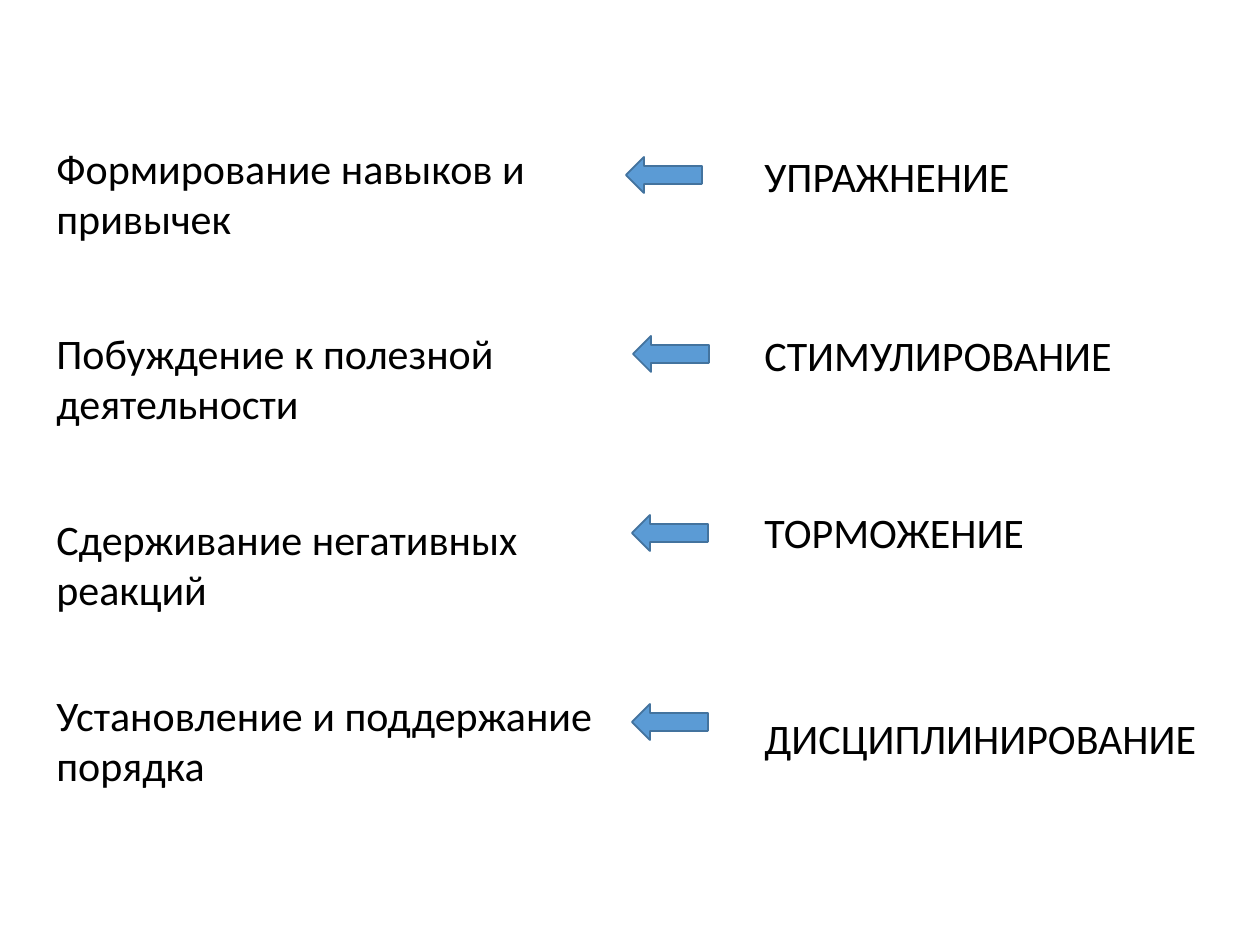
from dataclasses import dataclass

from pptx import Presentation
from pptx.dml.color import RGBColor
from pptx.enum.shapes import MSO_SHAPE
from pptx.enum.text import MSO_AUTO_SIZE
from pptx.util import Pt

LEFT_ARROW = MSO_SHAPE.LEFT_ARROW
FIT_SHAPE = MSO_AUTO_SIZE.SHAPE_TO_FIT_TEXT
PX = 914400 / 126


@dataclass(frozen=True)
class Theme:
    text: RGBColor = RGBColor(0x00, 0x00, 0x00)
    arrow_fill: RGBColor = RGBColor(0x5B, 0x9B, 0xD5)
    arrow_line: RGBColor = RGBColor(0x43, 0x73, 0x9E)
    font: str = "Calibri"
    body_size: int = 24
    line_width: int = 1


THEME = Theme()
FONT_FORMAT = {"name": THEME.font, "size": Pt(THEME.body_size)}


def px(*lengths):
    """Turn pixel lengths into EMU."""
    return [round(length * PX) for length in lengths]


def add_label(slide, text, left, top, width, height):
    shape = slide.shapes.add_textbox(*px(left, top, width, height))
    frame = shape.text_frame
    frame.word_wrap = True
    frame.auto_size = FIT_SHAPE
    run = frame.paragraphs[0].add_run()
    run.text = text
    for name, value in FONT_FORMAT.items():
        setattr(run.font, name, value)
    run.font.color.rgb = THEME.text


presentation = Presentation()
presentation.slide_width, presentation.slide_height = px(1260, 945)
slide = presentation.slides.add_slide(presentation.slide_layouts[6])

# (text, top) of each purpose on the left
purposes = [
    ("Формирование навыков и привычек", 136),
    ("Побуждение к полезной деятельности", 321),
    ("Сдерживание негативных реакций", 507),
    ("Установление и поддержание порядка", 683),
]
for text, top in purposes:
    add_label(slide, text, 44, top, 581, 115)

# (text, top, width) of each method on the right
methods = [
    ("УПРАЖНЕНИЕ", 144, 440),
    ("СТИМУЛИРОВАНИЕ", 323, 459),
    ("ТОРМОЖЕНИЕ", 500, 459),
    ("ДИСЦИПЛИНИРОВАНИЕ", 706, 459),
]
for text, top, width in methods:
    add_label(slide, text, 752, top, width, 63)

# Arrows lead from method to purpose
for left, top in [(626, 157), (633, 336), (632, 515), (632, 704)]:
    arrow = slide.shapes.add_shape(LEFT_ARROW, *px(left, top, 76, 36))
    arrow.shadow.inherit = False
    arrow.fill.solid()
    arrow.fill.fore_color.rgb = THEME.arrow_fill
    arrow.line.color.rgb = THEME.arrow_line
    arrow.line.width = Pt(THEME.line_width)

presentation.save("out.pptx")
